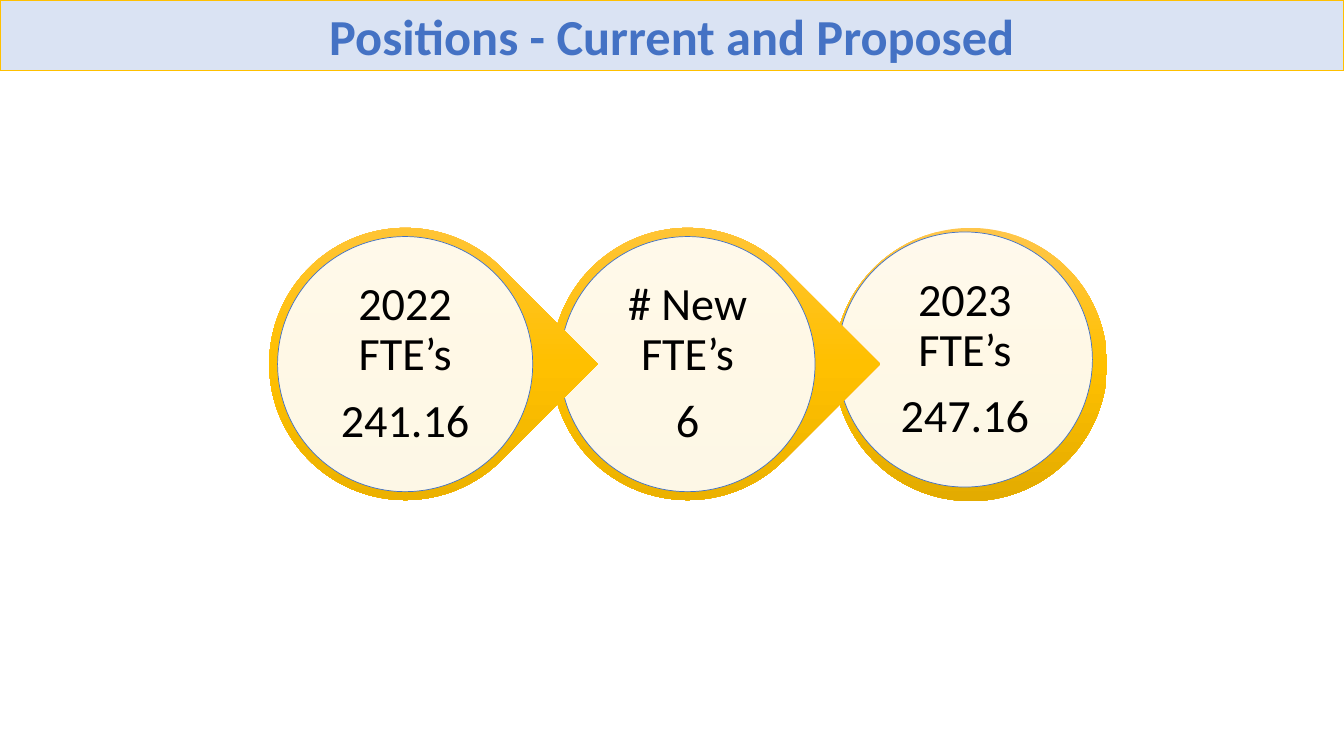
import pptx
import pptx.util
import pptx.dml.color
import pptx.enum.shapes
import pptx.enum.text
import pptx.oxml
import pptx.oxml.ns

Pt = pptx.util.Pt
SHAPES = pptx.enum.shapes.MSO_SHAPE
COLORS = {
    "title": "4472C4",
    "band": "DAE3F3",
    "gold": "FFC000",
    "gold_light": "FFC64B",
    "gold_dark": "E3AB00",
    "disc": "FFFFFF",
    "disc_edge": "4472C4",
    "text": "000000",
}
A_NS = pptx.oxml.ns.nsdecls("a")


def rgb(name):
    return pptx.dml.color.RGBColor.from_string(COLORS[name])


def write_centred(frame, lines, size, color, bold=False):
    """Fill a frame with centred paragraphs, anchored in the middle."""
    frame.word_wrap = True
    frame.vertical_anchor = pptx.enum.text.MSO_ANCHOR.MIDDLE
    frame.text = "\n".join(lines)
    for paragraph in frame.paragraphs:
        paragraph.alignment = pptx.enum.text.PP_ALIGN.CENTER
        font = paragraph.runs[0].font
        font.name = "Calibri"
        font.size = Pt(size)
        font.bold = bold
        font.color.rgb = rgb(color)


deck = pptx.Presentation()
deck.slide_width = Pt(960)
deck.slide_height = Pt(540)
slide = deck.slides.add_slide(deck.slide_layouts[6])

# Flow of positions: each step overlaps the one to its right
flow = slide.shapes.add_group_shape().shapes
FLOW_LEFT, FLOW_TOP, STEP = 192.3, 162.8, 201.7
DISC, LABEL = 182.2, 130.3
LABEL_OFFSET = (DISC - LABEL) / 2

# heading, value, outer shape, outer size, rotation, disc offset x, disc offset y
steps = [
    ("2022 FTE’s", "241.16", SHAPES.TEAR, 194.4, 45, 6, 6.2),
    ("# New FTE’s", "6", SHAPES.TEAR, 194.4, 45, 6, 6.2),
    ("2023 FTE’s", "247.16", SHAPES.OVAL, 195.1, 0, 2.4, 2.9),
]

for index, step in reversed(list(enumerate(steps))):
    heading, value, outline, size, rotation, offset_x, offset_y = step
    left = FLOW_LEFT + index * STEP

    rim = flow.add_shape(outline, Pt(left), Pt(FLOW_TOP), Pt(size), Pt(size))
    rim.rotation = rotation
    rim.shadow.inherit = False
    rim.line.fill.background()
    stops = "".join(
        f'<a:gs pos="{position}"><a:srgbClr val="{COLORS[name]}"/></a:gs>'
        for position, name in [(0, "gold_light"), (50000, "gold"), (100000, "gold_dark")]
    )
    gradient = pptx.oxml.parse_xml(
        f'<a:gradFill {A_NS} rotWithShape="0"><a:gsLst>{stops}</a:gsLst>'
        '<a:lin ang="5400000" scaled="0"/></a:gradFill>'
    )
    rim.element.spPr.find(pptx.oxml.ns.qn("a:prstGeom")).addnext(gradient)

    disc_left, disc_top = left + offset_x, FLOW_TOP + offset_y
    disc = flow.add_shape(SHAPES.OVAL, Pt(disc_left), Pt(disc_top), Pt(DISC), Pt(DISC))
    disc.shadow.inherit = False
    disc.fill.solid()
    disc.fill.fore_color.rgb = rgb("disc")
    disc_color = disc.element.spPr.find(".//" + pptx.oxml.ns.qn("a:srgbClr"))
    disc_color.append(pptx.oxml.parse_xml(f'<a:alpha {A_NS} val="90000"/>'))
    disc.line.color.rgb = rgb("disc_edge")
    disc.line.width = Pt(0.5)

    label = flow.add_textbox(
        Pt(disc_left + LABEL_OFFSET), Pt(disc_top + LABEL_OFFSET), Pt(LABEL), Pt(LABEL)
    ).text_frame
    label.margin_left = label.margin_right = Pt(3.6)
    label.margin_top = label.margin_bottom = Pt(3.6)
    write_centred(label, [heading, value], 33, "text")
    for paragraph in label.paragraphs:
        paragraph.line_spacing = 0.9
        paragraph.space_after = Pt(12)

# Title band
title = slide.shapes.add_shape(SHAPES.RECTANGLE, 0, 0, deck.slide_width, Pt(50.4))
title.shadow.inherit = False
title.fill.solid()
title.fill.fore_color.rgb = rgb("band")
title.line.color.rgb = rgb("gold")
title.line.width = Pt(1)
write_centred(title.text_frame, ["Positions - Current and Proposed"], 36, "title", bold=True)

deck.save("out.pptx")
